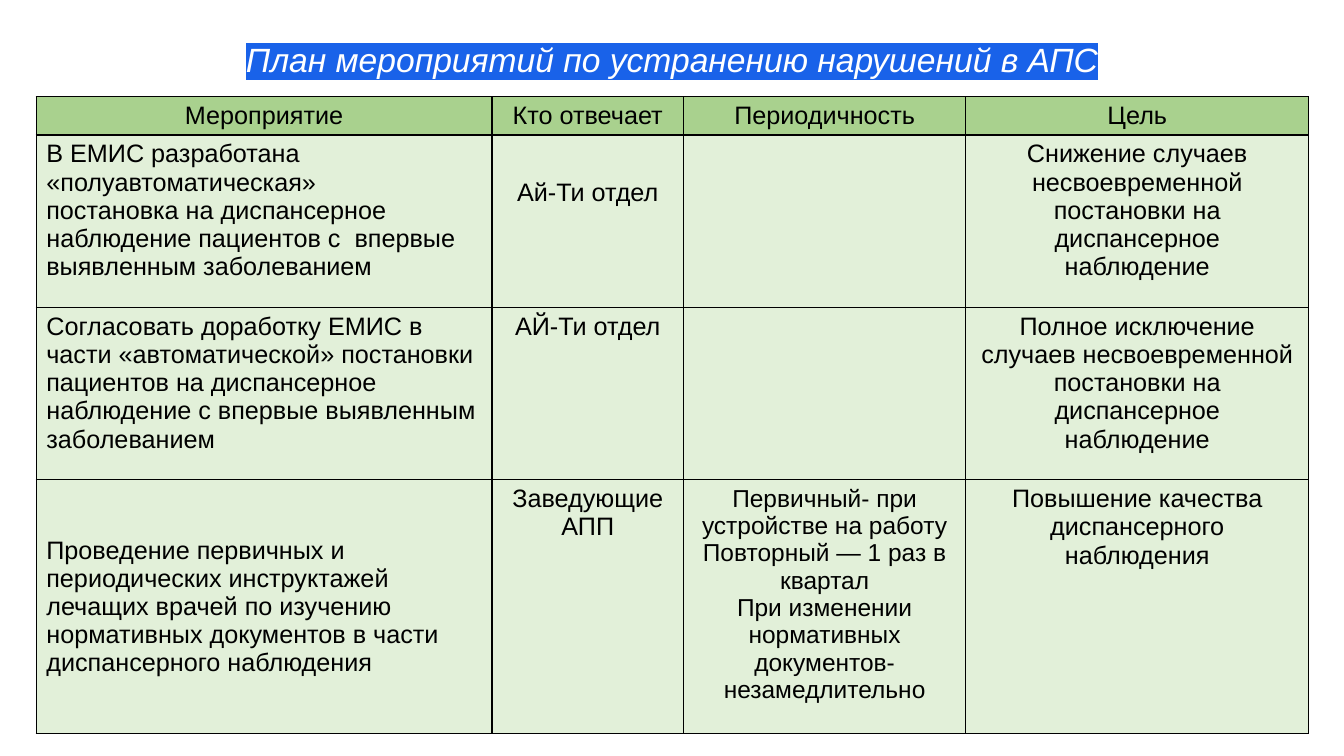
import pptx
import pptx.dml.color
import pptx.enum.text
import pptx.oxml
import pptx.oxml.ns
import pptx.util
from pptx.util import Inches

TITLE = "План мероприятий по устранению нарушений в АПС"
HEADS = ["Мероприятие", "Кто отвечает", "Периодичность", "Цель"]
PLAN = [
    (
        "В ЕМИС разработана «полуавтоматическая»\nпостановка на диспансерное "
        "наблюдение пациентов с  впервые выявленным заболеванием",
        "Ай-Ти отдел",
        "",
        "Снижение случаев несвоевременной постановки на диспансерное\vнаблюдение",
    ),
    (
        "Согласовать доработку ЕМИС в части «автоматической» постановки пациентов "
        "на диспансерное наблюдение с впервые выявленным заболеванием",
        "АЙ-Ти отдел",
        "",
        "Полное исключение случаев несвоевременной постановки на диспансерное\vнаблюдение",
    ),
    (
        "Проведение первичных и периодических инструктажей лечащих врачей по изучению "
        "нормативных документов в части диспансерного наблюдения",
        "Заведующие АПП",
        "Первичный- при устройстве на работу\nПовторный — 1 раз в квартал\n"
        "При изменении нормативных документов-незамедлительно",
        "Повышение качества диспансерного наблюдения",
    ),
]
WIDTHS = [4.52, 1.9, 2.8, 3.4]
HEIGHTS = [0.38, 1.71, 1.71, 2.52]
COLORS = {"head": "A9D18E", "body": "E2F0D9", "text": "000000",
          "line": "000000", "title": "FFFFFF", "mark": "1962E9"}
ALIGN = pptx.enum.text.PP_ALIGN
ANCHOR = pptx.enum.text.MSO_ANCHOR
SPACE = pptx.oxml.ns.nsdecls("a")


def color(name):
    return pptx.dml.color.RGBColor.from_string(COLORS[name])


def write(frame, text, size=18, ink="text", align=ALIGN.CENTER, italic=False, mark=None):
    frame.text = text
    for para in frame.paragraphs:
        para.alignment = align
        for run in para.runs:
            font = run.font
            font.name = "Arial"
            font.size = pptx.util.Pt(size)
            font.italic = italic
            font.color.rgb = color(ink)
            if mark:
                fill = font._element.find(pptx.oxml.ns.qn("a:solidFill"))
                fill.addnext(pptx.oxml.parse_xml(
                    f'<a:highlight {SPACE}><a:srgbClr val="{COLORS[mark]}"/></a:highlight>'))


def frame_cell(cell):
    props = cell._tc.get_or_add_tcPr()
    for place, side in enumerate("LRTB"):
        props.insert(place, pptx.oxml.parse_xml(
            f'<a:ln{side} {SPACE} w="12700"><a:solidFill>'
            f'<a:srgbClr val="{COLORS["line"]}"/></a:solidFill></a:ln{side}>'))


def main():
    deck = pptx.Presentation()
    deck.slide_width, deck.slide_height = Inches(13.33), Inches(7.5)
    slide = deck.slides.add_slide(deck.slide_layouts[5])

    title = slide.shapes.title
    title.left, title.top = Inches(0.63), Inches(0.31)
    title.width, title.height = Inches(12.07), Inches(0.56)
    title.text_frame.auto_size = pptx.enum.text.MSO_AUTO_SIZE.NONE
    title.text_frame.vertical_anchor = ANCHOR.MIDDLE
    write(title.text_frame, TITLE, size=24, ink="title", italic=True, mark="mark")

    rows = [HEADS, *PLAN]
    table = slide.shapes.add_table(
        len(rows), len(HEADS), Inches(0.36), Inches(0.96),
        Inches(sum(WIDTHS)), Inches(sum(HEIGHTS))).table
    table.first_row = table.horz_banding = False
    for col, width in zip(table.columns, WIDTHS):
        col.width = Inches(width)
    for row, height in zip(table.rows, HEIGHTS):
        row.height = Inches(height)

    for r, texts in enumerate(rows):
        for c, text in enumerate(texts):
            cell = table.cell(r, c)
            write(cell.text_frame, text, size=17.5 if (r, c) == (3, 2) else 18,
                  align=ALIGN.LEFT if r and c == 0 else ALIGN.CENTER)
            cell.fill.solid()
            cell.fill.fore_color.rgb = color("body" if r else "head")
            frame_cell(cell)
    table.cell(1, 1).margin_top = Inches(0.43)
    table.cell(3, 0).vertical_anchor = ANCHOR.MIDDLE

    deck.save("out.pptx")


if __name__ == "__main__":
    main()
